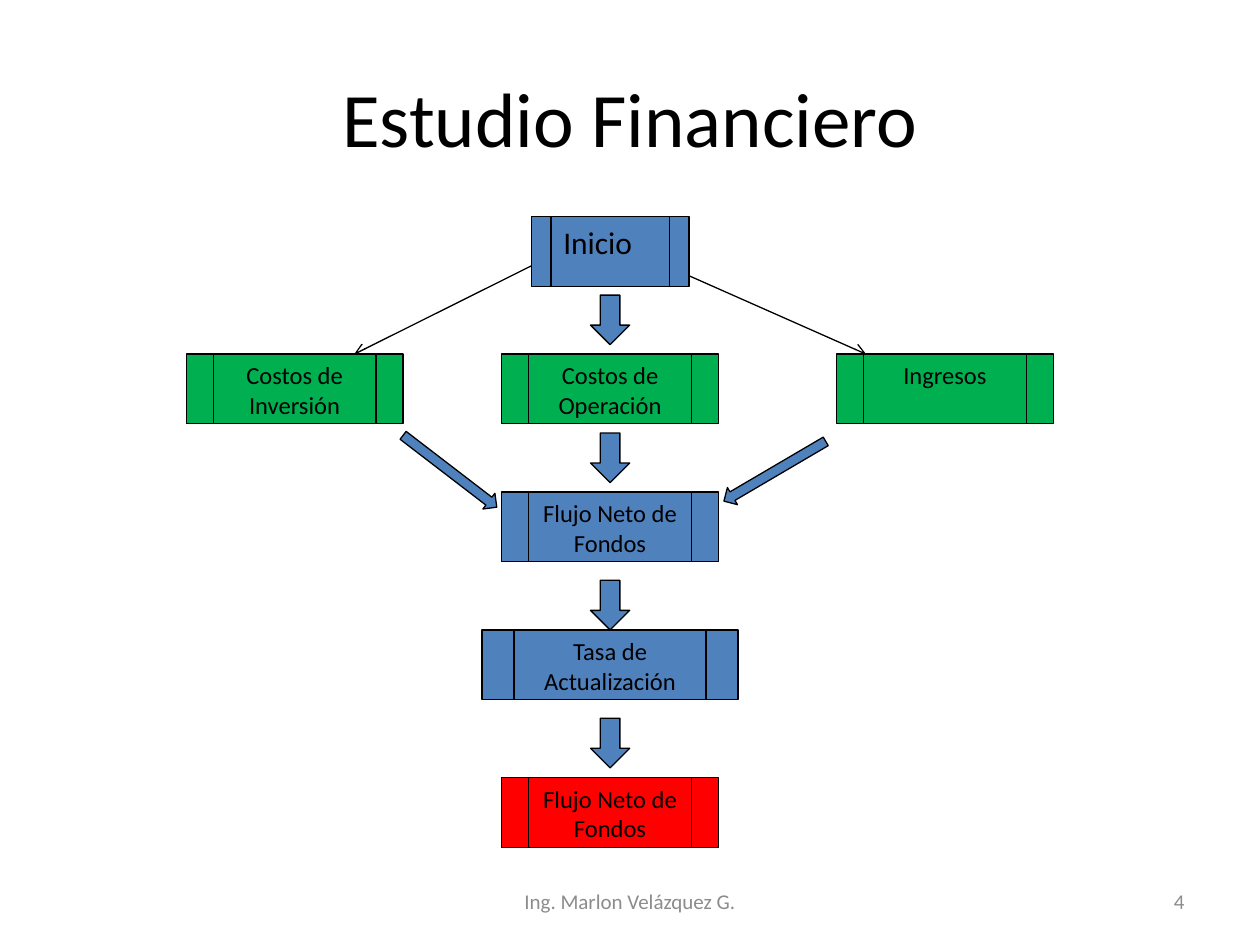
from dataclasses import dataclass

from lxml import etree
from pptx import Presentation
from pptx.dml.color import RGBColor
from pptx.enum.shapes import MSO_CONNECTOR, MSO_SHAPE
from pptx.enum.text import MSO_ANCHOR, PP_ALIGN
from pptx.oxml.ns import qn
from pptx.util import Cm, Pt

BLACK = RGBColor(0x00, 0x00, 0x00)
BLUE = RGBColor(0x4F, 0x81, 0xBD)
GREEN = RGBColor(0x00, 0xB0, 0x50)
RED = RGBColor(0xFF, 0x00, 0x00)
GRAY = RGBColor(0x8C, 0x8C, 0x8C)

FONT_NAME = "Calibri"
LINE_WIDTH = Pt(0.75)
LEFT_CENTER, MAIN_CENTER, RIGHT_CENTER = 5.94, 12.3, 19.05
BOX_HEIGHT = 1.4
COSTS_TOP = 7.14


@dataclass
class Process:
    """A flowchart box; lengths in centimetres."""
    text: str
    center: float
    top: float
    fill: RGBColor
    width: float = 4.37
    size: int = 14
    alignment: PP_ALIGN = PP_ALIGN.CENTER


@dataclass
class BlockArrow:
    """A block arrow placed by its centre; lengths in centimetres."""
    preset: MSO_SHAPE
    center_x: float
    center_y: float
    width: float
    height: float
    rotation: float = 0


@dataclass
class Branch:
    """A thin arrow between two points in centimetres."""
    start: tuple[float, float]
    end: tuple[float, float]


@dataclass
class Label:
    text: str
    left: float
    top: float
    width: float
    height: float
    size: int
    color: RGBColor
    alignment: PP_ALIGN = PP_ALIGN.CENTER


PROCESSES = [
    Process("Inicio", MAIN_CENTER, 4.37, BLUE, 3.18, 18, PP_ALIGN.LEFT),
    Process("Costos de Inversión", LEFT_CENTER, COSTS_TOP, GREEN),
    Process("Costos de Operación", MAIN_CENTER, COSTS_TOP, GREEN),
    Process("Ingresos", RIGHT_CENTER, COSTS_TOP, GREEN),
    Process("Flujo Neto de Fondos", MAIN_CENTER, 9.92, BLUE),
    Process("Tasa de Actualización", MAIN_CENTER, 12.7, BLUE, 5.16),
    Process("Flujo Neto de Fondos", MAIN_CENTER, 15.68, RED),
]
DOWN_ARROWS = [
    BlockArrow(MSO_SHAPE.DOWN_ARROW, MAIN_CENTER, center_y, 0.79, 1)
    for center_y in (6.45, 9.23, 12.2, 14.98)
]
SLANTED_ARROWS = [
    BlockArrow(MSO_SHAPE.LEFT_ARROW, 15.62, 9.5, 2.38, 0.4, 329.6),
    BlockArrow(MSO_SHAPE.LEFT_ARROW, 9.07, 9.5, 2.38, 0.4, 217.5),
]
BRANCHES = [
    Branch((13.89, 5.56), (17.46, COSTS_TOP)),
    Branch((10.71, 5.36), (7.14, COSTS_TOP)),
]
LABELS = [
    Label("Estudio Financiero", 1.27, 0.76, 22.86, 3.18, 44, BLACK),
    Label("Ing. Marlon Velázquez G.", 8.68, 17.65, 8.04, 1.02, 12, GRAY),
    Label("4", 18.2, 17.65, 5.93, 1.02, 12, GRAY, PP_ALIGN.RIGHT),
]


def write_text(shape, text: str, size: int, color: RGBColor,
               alignment: PP_ALIGN, anchor: MSO_ANCHOR) -> None:
    frame = shape.text_frame
    frame.word_wrap = True
    frame.vertical_anchor = anchor
    paragraph = frame.paragraphs[0]
    paragraph.alignment = alignment
    run = paragraph.add_run()
    run.text = text
    font_format = {"name": FONT_NAME, "size": Pt(size), "bold": False}
    for attribute, value in font_format.items():
        setattr(run.font, attribute, value)
    run.font.color.rgb = color


def add_outlined_shape(slide, preset: MSO_SHAPE, left: float, top: float,
                       width: float, height: float, fill: RGBColor):
    shape = slide.shapes.add_shape(preset, Cm(left), Cm(top), Cm(width), Cm(height))
    shape.shadow.inherit = False
    shape.fill.solid()
    shape.fill.fore_color.rgb = fill
    shape.line.color.rgb = BLACK
    shape.line.width = LINE_WIDTH
    return shape


def add_process(slide, process: Process) -> None:
    shape = add_outlined_shape(
        slide, MSO_SHAPE.FLOWCHART_PREDEFINED_PROCESS,
        process.center - process.width / 2, process.top,
        process.width, BOX_HEIGHT, process.fill)
    write_text(shape, process.text, process.size, BLACK,
               process.alignment, MSO_ANCHOR.TOP)


def add_block_arrow(slide, arrow: BlockArrow) -> None:
    shape = add_outlined_shape(
        slide, arrow.preset, arrow.center_x - arrow.width / 2,
        arrow.center_y - arrow.height / 2, arrow.width, arrow.height, BLUE)
    shape.rotation = arrow.rotation


def add_branch(slide, branch: Branch) -> None:
    points = [Cm(value) for value in (*branch.start, *branch.end)]
    connector = slide.shapes.add_connector(MSO_CONNECTOR.STRAIGHT, *points)
    connector.line.color.rgb = BLACK
    connector.line.width = LINE_WIDTH
    etree.SubElement(connector.line._get_or_add_ln(), qn("a:tailEnd"), type="arrow")
    etree.SubElement(connector._element.spPr, qn("a:effectLst"))


def add_label(slide, label: Label) -> None:
    shape = slide.shapes.add_textbox(
        Cm(label.left), Cm(label.top), Cm(label.width), Cm(label.height))
    write_text(shape, label.text, label.size, label.color,
               label.alignment, MSO_ANCHOR.MIDDLE)


def main() -> None:
    presentation = Presentation()
    presentation.slide_width = Cm(25.4)
    presentation.slide_height = Cm(19.05)
    slide = presentation.slides.add_slide(presentation.slide_layouts[6])

    for branch in BRANCHES:
        add_branch(slide, branch)
    for arrow in DOWN_ARROWS + SLANTED_ARROWS:
        add_block_arrow(slide, arrow)
    for process in PROCESSES:
        add_process(slide, process)
    for label in LABELS:
        add_label(slide, label)

    presentation.save("out.pptx")


if __name__ == "__main__":
    main()
